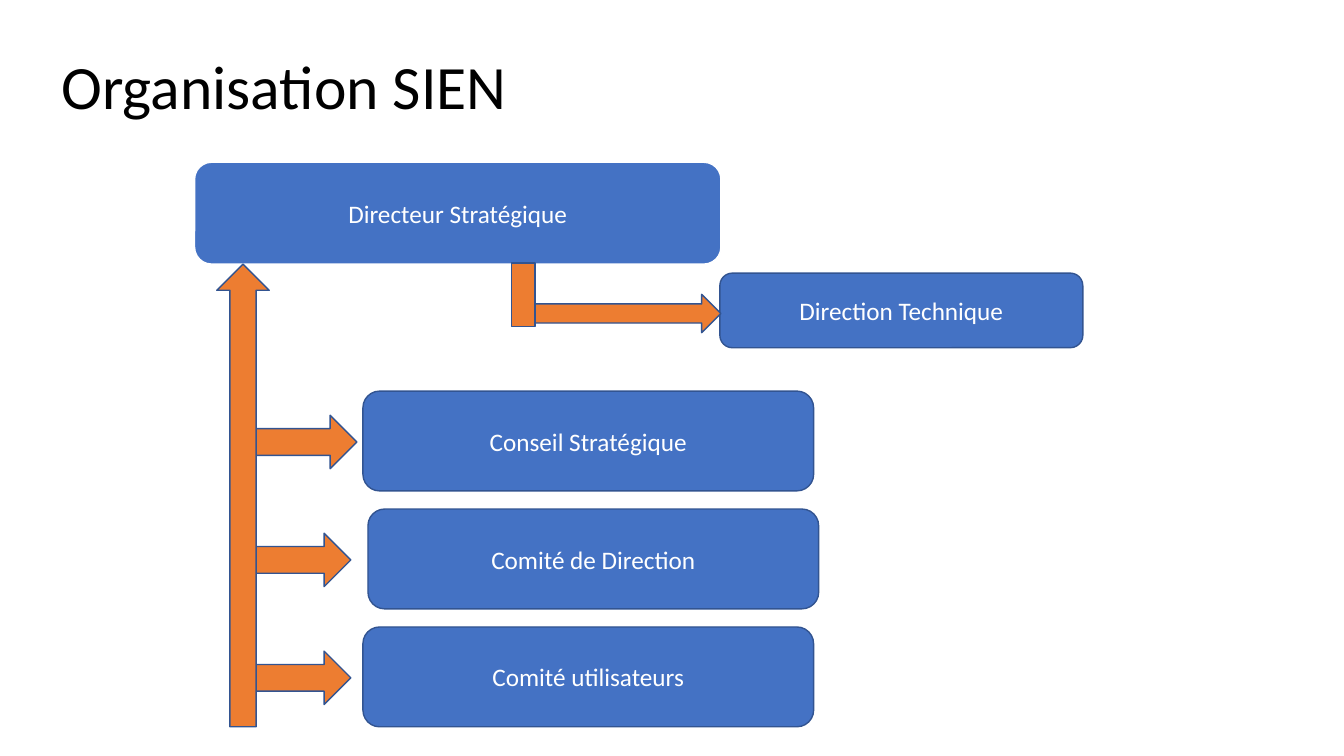
from pptx import Presentation
from pptx.dml.color import RGBColor
from pptx.enum import shapes, text
from pptx.util import Inches, Pt

BLACK = RGBColor(0x00, 0x00, 0x00)
WHITE = RGBColor(0xFF, 0xFF, 0xFF)
BLUE = RGBColor(0x44, 0x72, 0xC4)
NAVY = RGBColor(0x32, 0x54, 0x91)
ORANGE = RGBColor(0xED, 0x7D, 0x31)
SHAPE = shapes.MSO_SHAPE


class OrgChart:
    font = "Calibri"

    def __init__(self, slide):
        self.slide = slide

    def label(self, tf, words, size, color):
        tf.text = words
        tf.word_wrap = True
        tf.vertical_anchor = text.MSO_ANCHOR.MIDDLE
        p = tf.paragraphs[0]
        f = p.runs[0].font
        f.name, f.size = self.font, Pt(size)
        f.color.rgb = color
        return p

    def title(self, words, x, y, w, h):
        s = self.slide.shapes.add_textbox(Inches(x), Inches(y), Inches(w), Inches(h))
        tf = s.text_frame
        tf.margin_left = tf.margin_right = tf.margin_top = tf.margin_bottom = 0
        self.label(tf, words, 44, BLACK).line_spacing = 0.9

    def shape(self, kind, x, y, w, h, fill, line=NAVY):
        s = self.slide.shapes.add_shape(kind, Inches(x), Inches(y), Inches(w), Inches(h))
        s.shadow.inherit = False
        s.fill.solid()
        s.fill.fore_color.rgb = fill
        s.line.color.rgb = line
        s.line.width = Pt(1)
        return s

    def box(self, words, x, y, w, h, line=NAVY):
        s = self.shape(SHAPE.ROUNDED_RECTANGLE, x, y, w, h, BLUE, line)
        p = self.label(s.text_frame, words, 18, WHITE)
        p.alignment = text.PP_ALIGN.CENTER

    def arrow(self, kind, x, y, w, h, rotation=0):
        self.shape(kind, x, y, w, h, ORANGE).rotation = rotation


def main():
    prs = Presentation()
    prs.slide_width, prs.slide_height = Inches(13.33), Inches(7.5)
    chart = OrgChart(prs.slides.add_slide(prs.slide_layouts[6]))

    chart.title("Organisation SIEN", 0.61, 0.16, 11.5, 1.45)
    chart.box("Directeur Stratégique", 1.93, 1.61, 5.22, 1.01, WHITE)
    chart.box("Direction Technique", 7.14, 2.71, 3.6, 0.74)

    committees = [
        ("Conseil Stratégique", 3.6, 2.47),
        ("Comité de Direction", 3.65, 2.41),
        ("Comité utilisateurs", 3.6, 2.41),
    ]
    for i, (name, box_x, arrow_x) in enumerate(committees):
        y = 3.88 + i * 1.17
        chart.box(name, box_x, y, 4.47, 0.99)
        chart.arrow(SHAPE.RIGHT_ARROW, arrow_x, y + 0.24, 1.07, 0.53)

    chart.arrow(SHAPE.DOWN_ARROW, 2.15, 2.62, 0.52, 4.59, 180)
    chart.arrow(SHAPE.RIGHT_ARROW, 5.28, 2.92, 1.87, 0.38)
    chart.arrow(SHAPE.MATH_MINUS, 4.76, 2.43, 0.86, 0.99, 90)

    prs.save("out.pptx")


if __name__ == "__main__":
    main()
